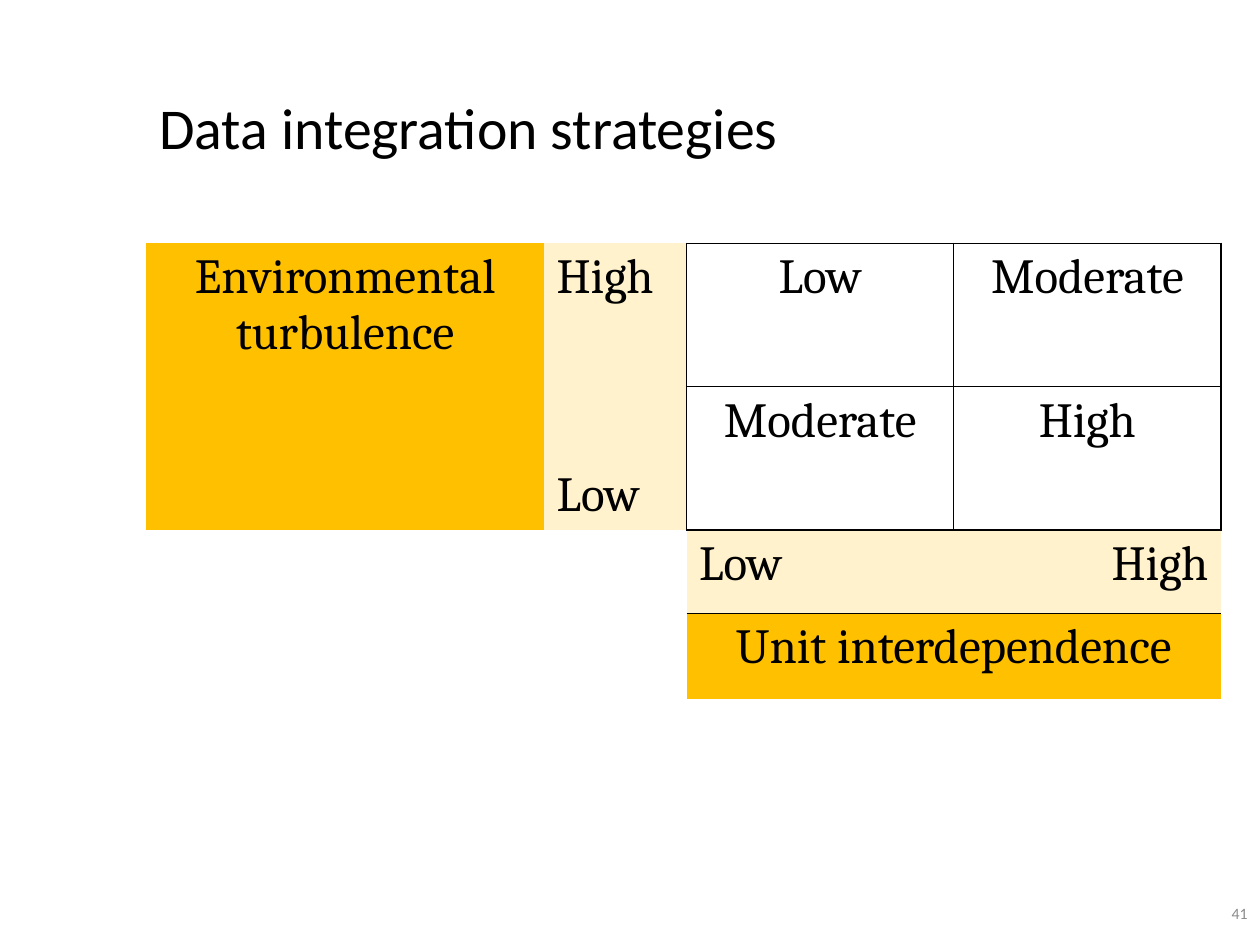
from lxml import etree
from pptx import Presentation
from pptx.dml.color import RGBColor
from pptx.enum import text
from pptx.oxml.ns import qn
from pptx.util import Pt

GOLD, CREAM, WHITE, BLACK = "FFC000", "FFF2CC", "FFFFFF", "000000"
LEFT, MID, RIGHT = text.PP_ALIGN.LEFT, text.PP_ALIGN.CENTER, text.PP_ALIGN.RIGHT
TOP, CENTRE, BOTTOM = (text.MSO_ANCHOR.TOP, text.MSO_ANCHOR.MIDDLE,
                       text.MSO_ANCHOR.BOTTOM)
PLAIN = "{2D5ABB26-0587-4C30-8999-92F81FD0307C}"  # no style, no grid
COLS = [210.2, 14.4, 81.4, 152.7, 152.7]
ROWS = [82, 82, 47.5, 49]

# row, column, wording, fill, alignment, anchor, border sides
CELLS = [
    (0, 0, "Environmental turbulence", GOLD, MID, TOP, ""),
    (0, 2, "High", CREAM, LEFT, TOP, "R"),
    (0, 3, "Low", WHITE, MID, TOP, "LRTB"),
    (0, 4, "Moderate", WHITE, MID, TOP, "LRTB"),
    (1, 2, "Low", CREAM, LEFT, BOTTOM, "R"),
    (1, 3, "Moderate", WHITE, MID, TOP, "LRTB"),
    (1, 4, "High", WHITE, MID, TOP, "LRTB"),
    (2, 3, "Low", CREAM, LEFT, TOP, "T"),
    (2, 4, "High", CREAM, RIGHT, TOP, "T"),
    (3, 3, "Unit interdependence", GOLD, MID, TOP, ""),
]
SPANS = [((0, 0), (1, 1)), ((2, 1), (2, 2)), ((3, 1), (3, 2)), ((3, 3), (3, 4))]


def color(code):
    return RGBColor.from_string(code)


def write(para, words, size, face, code, align):
    para.alignment = align
    run = para.add_run()
    run.text = words
    run.font.size = Pt(size)
    run.font.name = face
    run.font.color.rgb = color(code)


def label(slide, box, words, size, code, align):
    frame = slide.shapes.add_textbox(*map(Pt, box)).text_frame
    frame.word_wrap = True
    frame.vertical_anchor = CENTRE
    para = frame.paragraphs[0]
    write(para, words, size, "Calibri", code, align)
    return para


def border(cell, sides):
    """Draw thin black lines on the sides named, in the order L, R, T, B."""
    props = cell._tc.get_or_add_tcPr()
    for side in sides:
        line = etree.SubElement(props, qn("a:ln" + side), w=str(Pt(1)))
        fill = etree.SubElement(line, qn("a:solidFill"))
        etree.SubElement(fill, qn("a:srgbClr"), val=BLACK)


def matrix(slide):
    frame = slide.shapes.add_table(len(ROWS), len(COLS), Pt(83.5), Pt(139),
                                   Pt(sum(COLS)), Pt(sum(ROWS)))
    table = frame.table
    table.first_row = table.horz_banding = False
    table._tbl.tblPr.find(qn("a:tableStyleId")).text = PLAIN
    for col, width in zip(table.columns, COLS):
        col.width = Pt(width)
    for row, height in zip(table.rows, ROWS):
        row.height = Pt(height)
    for start, end in SPANS:
        table.cell(*start).merge(table.cell(*end))
    for row, col, words, fill, align, anchor, sides in CELLS:
        cell = table.cell(row, col)
        border(cell, sides)
        cell.fill.solid()
        cell.fill.fore_color.rgb = color(fill)
        cell.vertical_anchor = anchor
        para = cell.text_frame.paragraphs[0]
        para.space_before = Pt(5.6)
        write(para, words, 28, "Cambria", BLACK, align)


def main():
    deck = Presentation()
    deck.slide_width, deck.slide_height = Pt(720), Pt(540)
    slide = deck.slides.add_slide(deck.slide_layouts[6])
    title = label(slide, (84, 30, 612, 90), "Data integration strategies",
                  33, BLACK, LEFT)
    title.line_spacing = 0.9
    matrix(slide)
    label(slide, (654, 504, 66, 36), "41", 9, "8C8C8C", RIGHT)
    deck.save("out.pptx")


if __name__ == "__main__":
    main()
